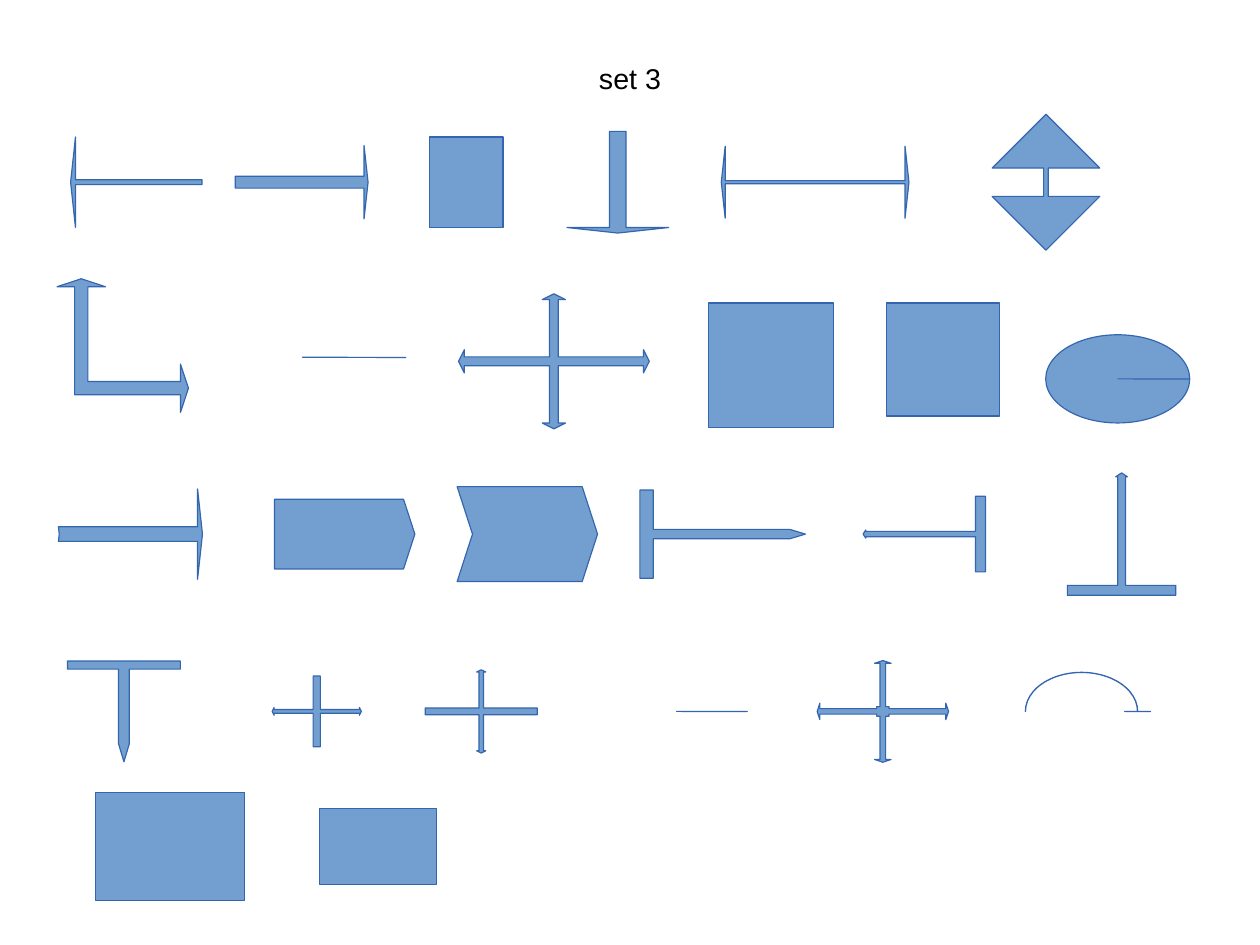
from dataclasses import dataclass

from pptx import Presentation
from pptx.dml.color import RGBColor
from pptx.enum.shapes import MSO_SHAPE
from pptx.enum.text import MSO_ANCHOR, PP_ALIGN
from pptx.slide import Slide
from pptx.util import Cm, Pt

RECT = MSO_SHAPE.RECTANGLE
PIE = MSO_SHAPE.PIE
LEFT = MSO_SHAPE.LEFT_ARROW
RIGHT = MSO_SHAPE.RIGHT_ARROW
DOWN = MSO_SHAPE.DOWN_ARROW
LEFT_RIGHT = MSO_SHAPE.LEFT_RIGHT_ARROW
UP_DOWN = MSO_SHAPE.UP_DOWN_ARROW
LEFT_UP = MSO_SHAPE.LEFT_UP_ARROW
QUAD = MSO_SHAPE.QUAD_ARROW
NOTCHED = MSO_SHAPE.NOTCHED_RIGHT_ARROW
HOME_PLATE = MSO_SHAPE.PENTAGON
CHEVRON = MSO_SHAPE.CHEVRON
CIRCULAR = MSO_SHAPE.CIRCULAR_ARROW
RIGHT_CALLOUT = MSO_SHAPE.RIGHT_ARROW_CALLOUT
LEFT_CALLOUT = MSO_SHAPE.LEFT_ARROW_CALLOUT
UP_CALLOUT = MSO_SHAPE.UP_ARROW_CALLOUT
DOWN_CALLOUT = MSO_SHAPE.DOWN_ARROW_CALLOUT
LEFT_RIGHT_CALLOUT = MSO_SHAPE.LEFT_RIGHT_ARROW_CALLOUT
UP_DOWN_CALLOUT = MSO_SHAPE.UP_DOWN_ARROW_CALLOUT
QUAD_CALLOUT = MSO_SHAPE.QUAD_ARROW_CALLOUT
CENTER = PP_ALIGN.CENTER
MIDDLE = MSO_ANCHOR.MIDDLE


@dataclass(frozen=True)
class Theme:
    """Colours, font and sizes of the slide."""
    fill: RGBColor = RGBColor(0x72, 0x9F, 0xCF)
    line: RGBColor = RGBColor(0x34, 0x65, 0xAF)
    text: RGBColor = RGBColor(0, 0, 0)
    font: str = "Arial"
    title_pt: float = 18
    line_pt: float = 0.75


@dataclass(frozen=True)
class Figure:
    """A preset shape in a row, measured in centimetres."""
    kind: MSO_SHAPE
    left: float
    width: float
    height: float
    adj: tuple[float, ...] = ()
    drop: float = 0
    flip: bool = False


@dataclass(frozen=True)
class Row:
    """Figures centred on one horizontal axis."""
    axis: float
    figures: tuple[Figure, ...]


THEME = Theme()

ROWS = (
    Row(4.05, (
        Figure(LEFT, 1.57, 2.92, 2.01, (0.054, 0.054)),
        Figure(RIGHT, 5.23, 2.95, 1.63, (0.162, 0.054)),
        Figure(RECT, 9.55, 1.63, 2.01),
        Figure(DOWN, 12.6, 2.26, 2.26, (0.162, 0.054)),
        Figure(LEFT_RIGHT, 16.03, 4.17, 1.6, (0.043, 0.054)),
        Figure(UP_DOWN, 22.05, 2.39, 3.02, (0.054, 0.043)),
    )),
    Row(8.03, (
        Figure(LEFT_UP, 1.27, 2.92, 2.97, (0.101, 0.184, 0.061), drop=-0.35, flip=True),
        Figure(PIE, 4.42, 4.6, 2.97, (0.065, 0.086), drop=-0.09),
        Figure(QUAD, 10.19, 4.24, 3, (0.065, 0.086, 0.043)),
        Figure(RECT, 15.75, 2.77, 2.77, drop=0.09),
        Figure(RECT, 19.71, 2.51, 2.51, drop=-0.04),
        Figure(PIE, 23.24, 3.2, 1.96, (0.132, 0.064), drop=0.39),
    )),
    Row(11.87, (
        Figure(NOTCHED, 1.3, 3.2, 2.01, (0.162, 0.054)),
        Figure(HOME_PLATE, 6.1, 3.12, 1.55, (0.162,)),
        Figure(CHEVRON, 10.16, 3.12, 2.11, (0.162,)),
        Figure(RIGHT_CALLOUT, 14.22, 3.68, 1.96, (0.144, 0.054, 0.18, 0.081)),
        Figure(LEFT_CALLOUT, 19.18, 2.72, 1.68, (0.072, 0.054, 0.036, 0.081)),
        Figure(UP_CALLOUT, 23.72, 2.41, 2.72, (0.072, 0.054, 0.036, 0.081)),
    )),
    Row(15.81, (
        Figure(DOWN_CALLOUT, 1.5, 2.51, 2.24, (0.144, 0.054, 0.18, 0.081)),
        Figure(LEFT_RIGHT_CALLOUT, 6.05, 1.98, 1.57, (0.054, 0.055, 0.027, 0.081)),
        Figure(UP_DOWN_CALLOUT, 9.45, 2.49, 1.85, (0.054, 0.055, 0.027, 0.081)),
        Figure(PIE, 13.46, 3.15, 2.39, (0.036, 0.087)),
        Figure(QUAD_CALLOUT, 18.16, 2.92, 2.26, (0.054, 0.081, 0.027, 0.094)),
        Figure(CIRCULAR, 22.5, 3.07, 2.31, (0.002, 0, 0.055, 108, 0.125)),
    )),
    Row(18.81, (
        Figure(RECT, 2.13, 3.3, 2.41),
        Figure(RECT, 7.11, 2.59, 1.68),
    )),
)


def add_text(slide: Slide, text: str, left: float, top: float, width: float, height: float, *,
             size: float, color: RGBColor, align: PP_ALIGN, anchor: MSO_ANCHOR) -> None:
    """Add a text box without margins."""
    sp = slide.shapes.add_textbox(Cm(left), Cm(top), Cm(width), Cm(height))
    tf = sp.text_frame
    tf.word_wrap = True
    tf.vertical_anchor = anchor
    tf.margin_left = tf.margin_right = tf.margin_top = tf.margin_bottom = 0
    p = tf.paragraphs[0]
    p.alignment = align
    r = p.add_run()
    r.text = text
    r.font.name = THEME.font
    r.font.size = Pt(size)
    r.font.color.rgb = color


def add_figure(slide: Slide, figure: Figure, axis: float) -> None:
    """Draw a figure centred on its row's axis."""
    top = axis + figure.drop - figure.height / 2
    sp = slide.shapes.add_shape(figure.kind, Cm(figure.left), Cm(top),
                                Cm(figure.width), Cm(figure.height))
    sp.shadow.inherit = False
    sp.fill.solid()
    sp.fill.fore_color.rgb = THEME.fill
    sp.line.color.rgb = THEME.line
    sp.line.width = Pt(THEME.line_pt)
    for i, value in enumerate(figure.adj):
        sp.adjustments[i] = value
    if figure.flip:
        sp.element.spPr.xfrm.set("flipH", "1")


def main() -> None:
    """Build the slide and save it."""
    prs = Presentation()
    prs.slide_width, prs.slide_height = Cm(28), Cm(21)
    s = prs.slides.add_slide(prs.slide_layouts[6])
    add_text(s, "set 3", 1.4, 0.84, 25.2, 1.8, size=THEME.title_pt,
             color=THEME.text, align=CENTER, anchor=MIDDLE)
    for row in ROWS:
        for figure in row.figures:
            add_figure(s, figure, row.axis)
    prs.save("out.pptx")


if __name__ == "__main__":
    main()
